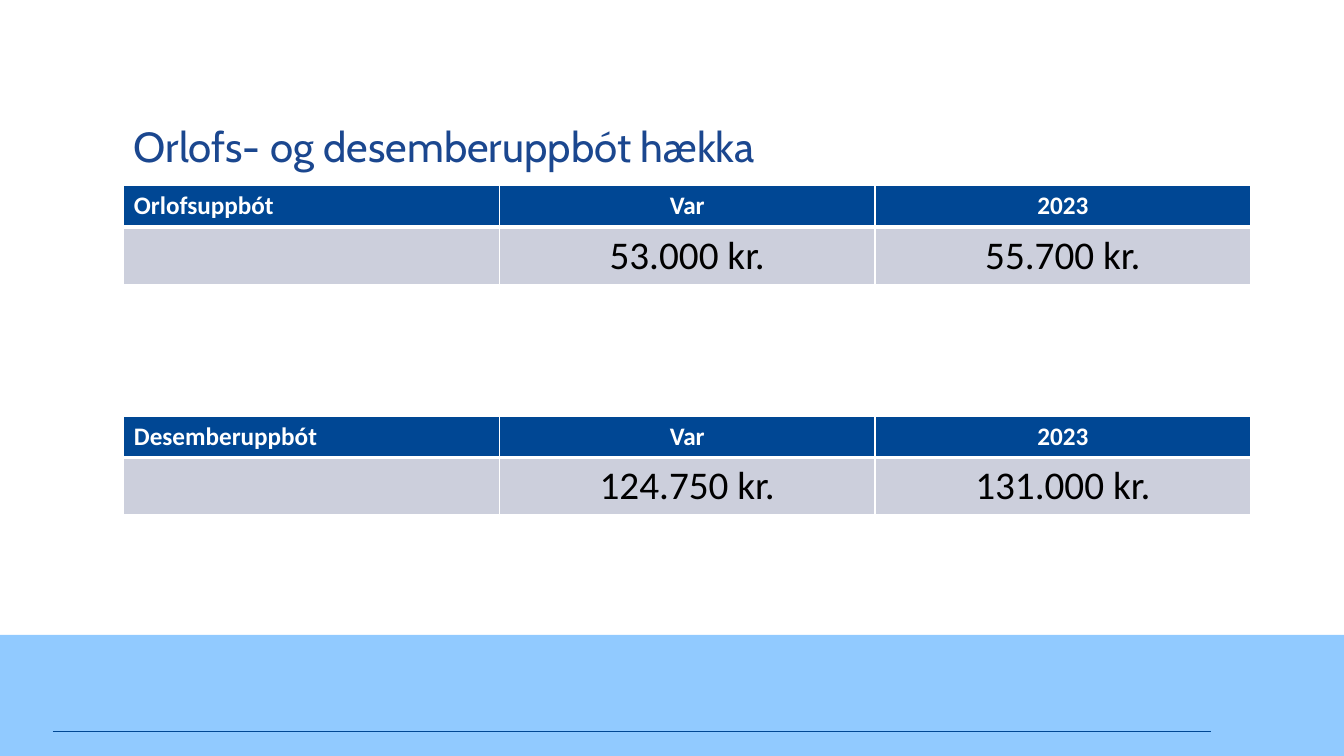
from dataclasses import dataclass

from lxml.etree import SubElement
from pptx import Presentation
from pptx.dml.color import RGBColor as RGB
from pptx.enum.shapes import MSO_CONNECTOR, MSO_SHAPE
from pptx.enum.text import MSO_ANCHOR, PP_ALIGN
from pptx.oxml.ns import qn
from pptx.util import Cm, Pt


@dataclass(frozen=True)
class Theme:
    navy: RGB = RGB(0x00, 0x47, 0x94)
    title: RGB = RGB(0x1B, 0x47, 0x8F)
    sky: RGB = RGB(0x91, 0xCA, 0xFF)
    grey: RGB = RGB(0xCC, 0xCF, 0xDC)
    white: RGB = RGB(0xFF, 0xFF, 0xFF)
    black: RGB = RGB(0, 0, 0)
    title_font: str = "Cabin"
    table_font: str = "Calibri"
    title_size: Pt = Pt(30)
    header_size: Pt = Pt(18)
    value_size: Pt = Pt(28)


def set_font(p, name, size, color, bold=False):
    p.font.name, p.font.size, p.font.bold = name, size, bold
    p.font.color.rgb = color


def set_borders(cell, color, **widths):
    """Draw cell borders; widths maps L, R, T and B, in that order, to points."""
    tcPr = cell._tc.get_or_add_tcPr()
    for side, width in widths.items():
        ln = SubElement(tcPr, qn(f"a:ln{side}"), w=str(Pt(width)))
        fill = SubElement(ln, qn("a:solidFill"))
        SubElement(fill, qn("a:srgbClr"), val=str(color))


theme = Theme()
prs = Presentation()
prs.slide_width, prs.slide_height = Cm(33.87), Cm(19.05)
s = prs.slides.add_slide(prs.slide_layouts[6])
left, width = Cm(3.12), Cm(28.4)

# Footer band and rule
band = s.shapes.add_shape(MSO_SHAPE.RECTANGLE, 0, Cm(16), prs.slide_width, Cm(3.05))
band.shadow.inherit = False
band.fill.solid()
band.fill.fore_color.rgb = theme.sky
band.line.fill.background()

rule = s.shapes.add_connector(MSO_CONNECTOR.STRAIGHT, Cm(1.33), Cm(18.43), Cm(30.53), Cm(18.43))
rule.line.color.rgb = theme.navy
rule.line.width = Pt(0.5)
SubElement(rule._element.spPr, qn("a:effectLst"))

# Title
title = s.shapes.add_textbox(left, Cm(2.9), width, Cm(1.7))
tf = title.text_frame
tf.word_wrap = True
tf.vertical_anchor = MSO_ANCHOR.MIDDLE
p = tf.paragraphs[0]
p.text = "Orlofs- og desemberuppbót hækka"
p.line_spacing = 0.9
set_font(p, theme.title_font, theme.title_size, theme.title)

# Tables
supplements = [
    (Cm(4.68), "Orlofsuppbót", "53.000 kr.", "55.700 kr."),
    (Cm(10.49), "Desemberuppbót", "124.750 kr.", "131.000 kr."),
]
row_heights = [Cm(1.04), Cm(1.42)]
for top, name, before, after in supplements:
    table = s.shapes.add_table(2, 3, left, top, width, sum(row_heights)).table
    for row, height in zip(table.rows, row_heights):
        row.height = height
    rows = [(name, "Var", "2023"), ("", before, after)]
    for r, texts in enumerate(rows):
        header = r == 0
        for c, text in enumerate(texts):
            cell = table.cell(r, c)
            set_borders(cell, theme.white, L=1, R=1, T=1 if header else 3, B=3 if header else 1)
            cell.fill.solid()
            cell.fill.fore_color.rgb = theme.navy if header else theme.grey
            p = cell.text_frame.paragraphs[0]
            p.text = text
            p.alignment = PP_ALIGN.CENTER if c else PP_ALIGN.LEFT
            if header:
                set_font(p, theme.table_font, theme.header_size, theme.white, bold=True)
            else:
                set_font(p, theme.table_font, theme.value_size, theme.black)

prs.save("out.pptx")
